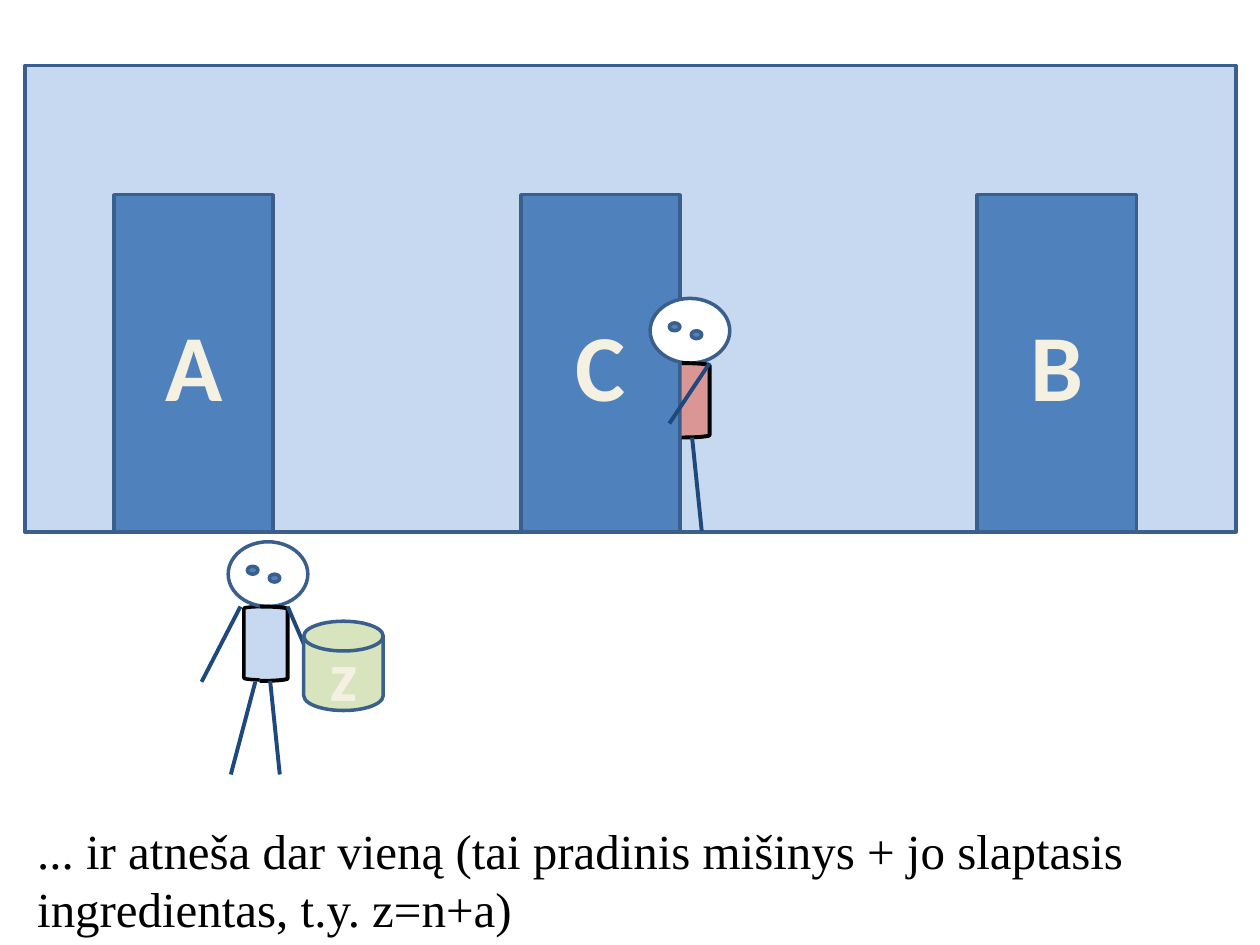
import pptx
import pptx.util
import pptx.dml.color
import pptx.enum.shapes
import pptx.enum.text
import pptx.oxml
from dataclasses import dataclass

Pt = pptx.util.Pt
SHAPE = pptx.enum.shapes.MSO_SHAPE
ALIGN = pptx.enum.text.PP_ALIGN
ANCHOR = pptx.enum.text.MSO_ANCHOR


@dataclass(frozen=True)
class Theme:
    wall: str = "C6D9F1"
    accent: str = "4F81BD"
    outline: str = "3A5F8C"
    limb: str = "1F497D"
    white: str = "FFFFFF"
    black: str = "000000"
    guest: str = "D99694"
    bucket: str = "D7E4BD"
    label: str = "F4F1E3"
    label_font: str = "Calibri"
    caption_font: str = "Times New Roman"
    door_size: int = 54
    bucket_size: int = 40
    caption_size: int = 28
    thin: float = 2
    thick: float = 2.25


def rgb(value):
    return pptx.dml.color.RGBColor.from_string(value)


def apply(target, values):
    for name, value in values.items():
        setattr(target, name, value)


class Canvas:
    def __init__(self, slide, theme):
        self.slide = slide
        self.theme = theme
        self.shapes = slide.shapes

    def start_group(self):
        self.shapes = self.slide.shapes.add_group_shape().shapes

    def end_group(self):
        self.shapes = self.slide.shapes

    def shape(self, kind, box, fill, line=None, width=None):
        shape = self.shapes.add_shape(kind, *map(Pt, box))
        shape.shadow.inherit = False
        shape.fill.solid()
        shape.fill.fore_color.rgb = rgb(fill)
        shape.line.color.rgb = rgb(line or self.theme.outline)
        shape.line.width = Pt(width or self.theme.thin)
        return shape

    def add_text(self, shape, text, font, size, color, bold=False, align=ALIGN.LEFT, anchor=ANCHOR.TOP):
        apply(shape.text_frame, {"word_wrap": True, "vertical_anchor": anchor})
        paragraph = shape.text_frame.paragraphs[0]
        paragraph.alignment = align
        run = paragraph.add_run()
        run.text = text
        apply(run.font, {"name": font, "size": Pt(size), "bold": bold})
        run.font.color.rgb = rgb(color)

    def labelled(self, kind, box, fill, text, size):
        shape = self.shape(kind, box, fill)
        self.add_text(shape, text, self.theme.label_font, size, self.theme.label,
                      bold=True, align=ALIGN.CENTER, anchor=ANCHOR.MIDDLE)

    def caption(self, box, text):
        shape = self.shapes.add_textbox(*map(Pt, box))
        self.add_text(shape, text, self.theme.caption_font, self.theme.caption_size, self.theme.black)

    def line(self, start, end):
        connector = self.shapes.add_connector(
            pptx.enum.shapes.MSO_CONNECTOR.STRAIGHT, *map(Pt, start + end))
        connector.line.color.rgb = rgb(self.theme.limb)
        connector.line.width = Pt(self.theme.thick)
        properties = connector._element.spPr
        properties.append(pptx.oxml.parse_xml(
            '<a:effectLst xmlns:a="http://schemas.openxmlformats.org/drawingml/2006/main"/>'))

    def figure(self, left, top, shirt, limbs, whole=True):
        """A stick figure; all parts are placed from the corner of its head."""
        theme = self.theme
        if whole:
            self.shape(SHAPE.LEFT_BRACKET, (left + 9, top + 37, 13, 42), shirt, theme.black)
        self.shape(SHAPE.OVAL, (left, top, 45.5, 37), theme.white)
        for x, y in ((11, 14), (23.5, 18.5)):
            self.shape(SHAPE.OVAL, (left + x, top + y, 6, 4.5), theme.accent)
        self.shape(SHAPE.RIGHT_BRACKET, (left + 18, top + 37, 16, 42.5), shirt, theme.black, theme.thick)
        for x1, y1, x2, y2 in limbs:
            self.line((left + x1, top + y1), (left + x2, top + y2))


def main():
    theme = Theme()
    presentation = pptx.Presentation()
    apply(presentation, {"slide_width": Pt(720), "slide_height": Pt(540)})
    slide = presentation.slides.add_slide(presentation.slide_layouts[6])
    canvas = Canvas(slide, theme)

    # Wall with three doors
    canvas.shape(SHAPE.RECTANGLE, (14.2, 37.5, 692, 266.5), theme.wall)
    for letter, left in (("A", 65.2), ("B", 558.4), ("C", 297.6)):
        canvas.labelled(SHAPE.RECTANGLE, (left, 111.3, 91, 192.7), theme.accent, letter, theme.door_size)

    # Figure half hidden by door C
    right_leg = (24, 79.5, 29.5, 133)
    canvas.figure(371.5, 170.5, theme.guest, [right_leg, (34, 37, 11, 71.5)], whole=False)

    # Figure with the bucket
    canvas.start_group()
    canvas.figure(130.4, 309.6, theme.wall,
                  [right_leg, (34, 37, 52.5, 80), (15.5, 80, 1.5, 133), (7, 37, -15.2, 80)])
    canvas.end_group()
    canvas.labelled(SHAPE.FLOWCHART_MAGNETIC_DISK, (173.6, 355, 45.4, 51), theme.bucket, "z", theme.bucket_size)

    # Caption
    canvas.caption((14.2, 465.1, 720, 75),
                   "... ir atneša dar vieną (tai pradinis mišinys + jo slaptasis ingredientas, t.y. z=n+a)")

    presentation.save("out.pptx")


if __name__ == "__main__":
    main()
